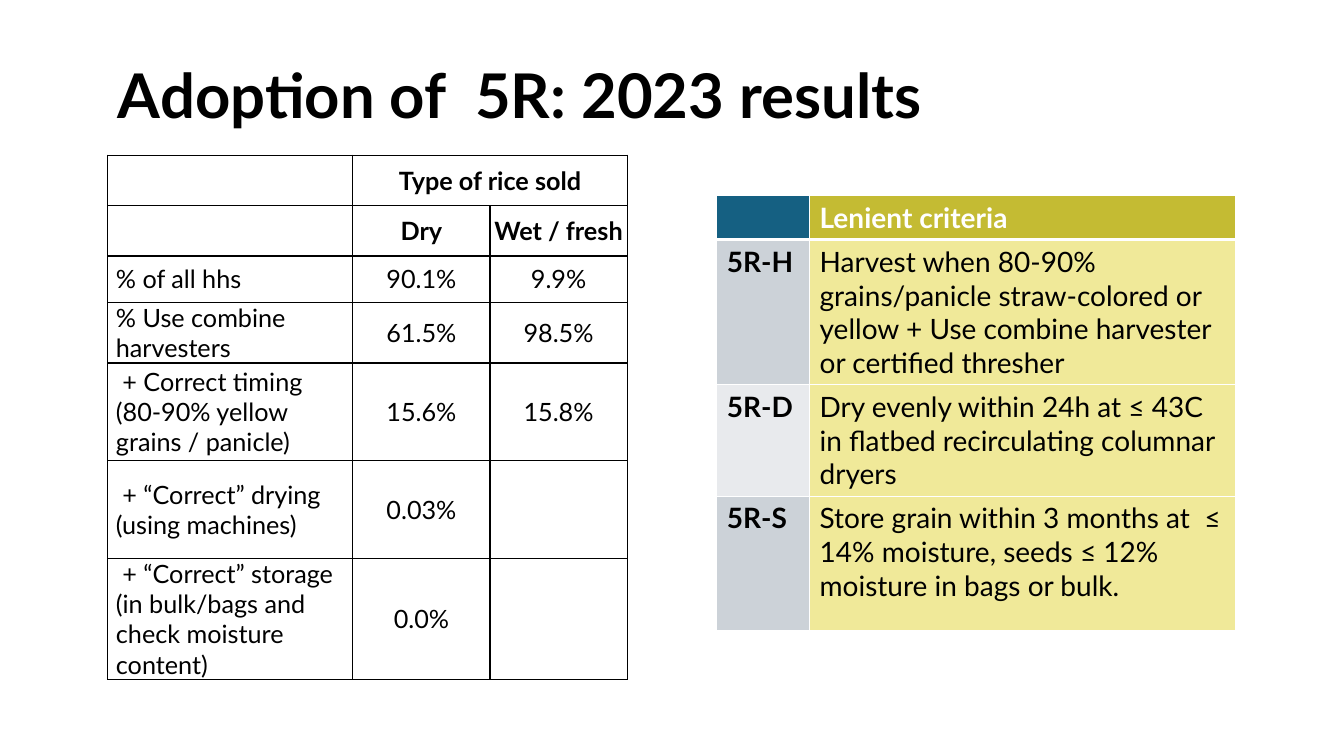
from lxml import etree
from pptx import Presentation
from pptx.dml.color import RGBColor
from pptx.enum import text
from pptx.oxml.ns import qn
from pptx.util import Pt

PX = 9144  # 100 px to the inch
FONT = "Lato"


def style(paragraph, size, color, bold):
    font = paragraph.font
    for f in [font] + [r.font for r in paragraph.runs]:
        f.name, f.size, f.bold = FONT, Pt(size), bold
        f.color.rgb = RGBColor.from_string(color)


def format_cell(cell, border, bottom=1, fill=None):
    tcPr = cell._tc.get_or_add_tcPr()
    for side in ("lnL", "lnR", "lnT", "lnB"):
        width = bottom if side == "lnB" else 1
        ln = etree.SubElement(tcPr, qn(f"a:{side}"), w=str(Pt(width)))
        solid = etree.SubElement(ln, qn("a:solidFill"))
        etree.SubElement(solid, qn("a:srgbClr"), val=border)
    if fill:
        cell.fill.solid()
        cell.fill.fore_color.rgb = RGBColor.from_string(fill)
    else:
        cell.fill.background()


prs = Presentation()
prs.slide_width, prs.slide_height = 1333 * PX, 750 * PX
s = prs.slides.add_slide(prs.slide_layouts[5])

# Title
title = s.shapes.title
title.left, title.top, title.width, title.height = (v * PX for v in (107, 46, 1150, 104))
tf = title.text_frame
tf.text = "Adoption of  5R: 2023 results"
tf.vertical_anchor = text.MSO_ANCHOR.MIDDLE
p = tf.paragraphs[0]
p.alignment = text.PP_ALIGN.LEFT
p.line_spacing = 0.9
style(p, 44, "000000", True)

# Lenient criteria table
criteria = [
    ("", "Lenient criteria"),
    ("5R-H", "Harvest when 80-90% grains/panicle straw-colored or yellow + "
             "Use combine harvester or certified thresher"),
    ("5R-D", "Dry evenly within 24h at ≤ 43C  in flatbed recirculating columnar dryers"),
    ("5R-S", "Store grain within 3 months at  ≤ 14% moisture, seeds ≤ 12% "
             "moisture in bags or bulk."),
]
fills = [("156082", "C4BB33"), ("CCD2D8", "F0E999"), ("E8EAED", "F0E999"), ("CCD2D8", "F0E999")]
table = s.shapes.add_table(4, 2, 711 * PX, 194 * PX, 515 * PX, 407 * PX).table
for column, width in zip(table.columns, (92, 423)):
    column.width = width * PX
for i, height in enumerate((40, 132, 102, 133)):
    table.rows[i].height = height * PX
    for j in range(2):
        cell = table.cell(i, j)
        cell.text = criteria[i][j]
        format_cell(cell, "FFFFFF", 3 if i == 0 else 1, fills[i][j])
        style(cell.text_frame.paragraphs[0], 20,
              "FFFFFF" if i == 0 else "000000", i == 0 or j == 0)

# Adoption table
adoption = [
    ("", "Type of rice sold", ""),
    ("", "Dry", "Wet / fresh"),
    ("% of all hhs", "90.1%", "9.9%"),
    ("% Use combine harvesters", "61.5%", "98.5%"),
    (" + Correct timing (80-90% yellow grains / panicle)", "15.6%", "15.8%"),
    (" + “Correct” drying (using machines)", "0.03%", ""),
    (" + “Correct” storage\n(in bulk/bags and check moisture content)", "0.0%", ""),
]
table = s.shapes.add_table(7, 3, 107 * PX, 154 * PX, 515 * PX, 487 * PX).table
table.first_row = table.horz_banding = False
for column, width in zip(table.columns, (243, 136, 136)):
    column.width = width * PX
for i, height in enumerate((50, 50, 46, 50, 97, 97, 97)):
    table.rows[i].height = height * PX
    for j in range(3):
        cell = table.cell(i, j)
        cell.text = adoption[i][j]
        format_cell(cell, "000000")
        cell.vertical_anchor = text.MSO_ANCHOR.MIDDLE
        cell.margin_left = 8 * PX if j == 0 else 0
        cell.margin_right = cell.margin_top = cell.margin_bottom = 0
        for p in cell.text_frame.paragraphs:
            p.alignment = text.PP_ALIGN.CENTER if j else text.PP_ALIGN.LEFT
            style(p, 18, "000000", i < 2)
table.cell(0, 1).merge(table.cell(0, 2))

prs.save("out.pptx")
